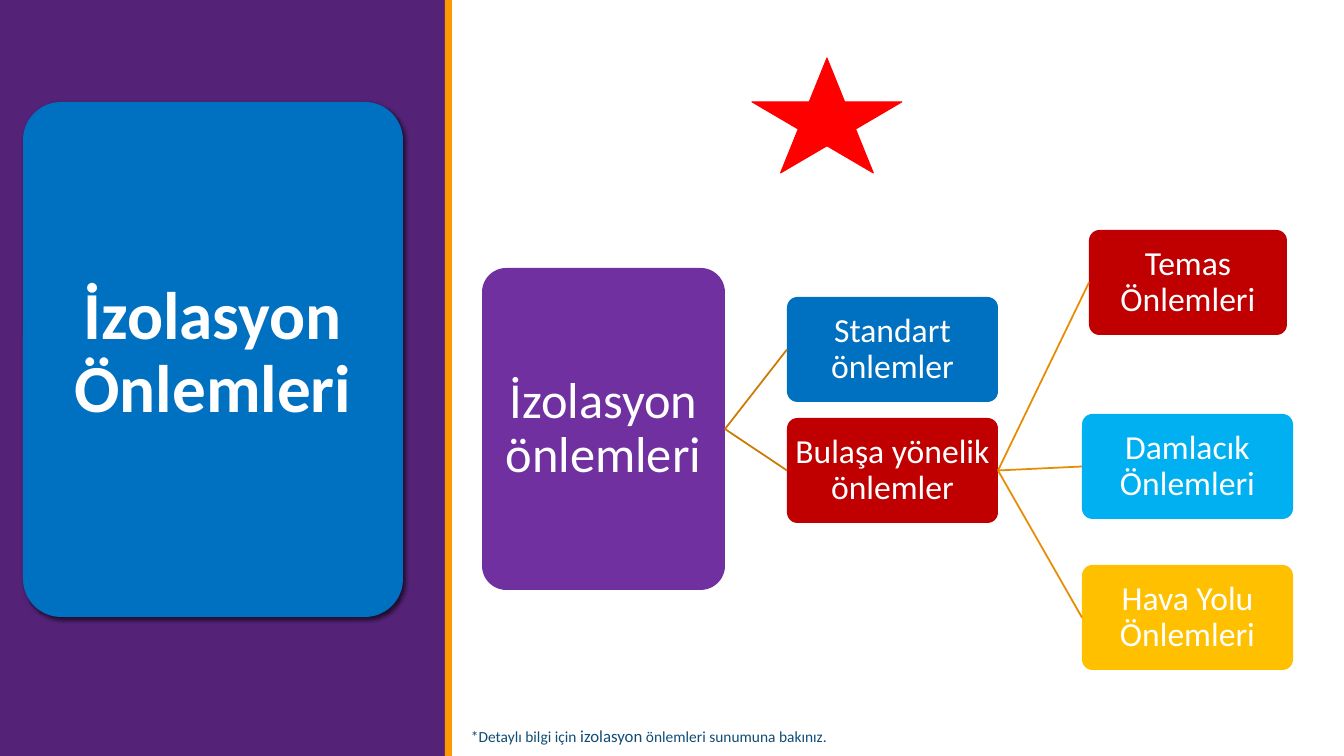
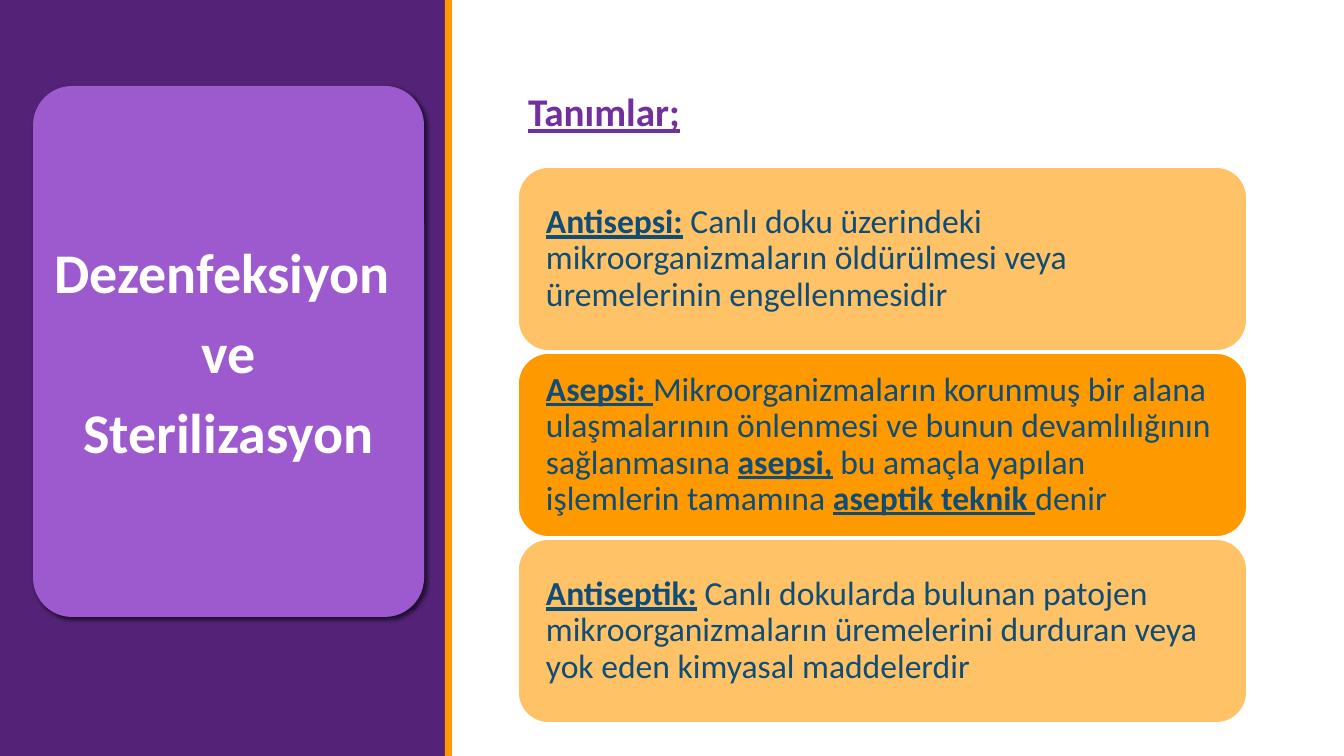
from lxml import etree
from pptx import Presentation
from pptx.dml.color import RGBColor
from pptx.enum.shapes import MSO_CONNECTOR, MSO_SHAPE
from pptx.enum.text import MSO_ANCHOR, PP_ALIGN
from pptx.oxml import parse_xml
from pptx.oxml.ns import nsdecls, qn
from pptx.util import Emu, Pt

RECT, ROUND, STAR = MSO_SHAPE.RECTANGLE, MSO_SHAPE.ROUNDED_RECTANGLE, MSO_SHAPE.STAR_5_POINT
STRAIGHT = MSO_CONNECTOR.STRAIGHT
LEFT, CENTER = PP_ALIGN.LEFT, PP_ALIGN.CENTER
TOP, MIDDLE = MSO_ANCHOR.TOP, MSO_ANCHOR.MIDDLE
LEFT_SITE, RIGHT_SITE = 1, 3

FONT = "Calibri"
PX_PER_INCH = 100.8
WIDTH, HEIGHT = 1344, 756
COLORS = {
    "white": "FFFFFF", "band": "542378", "orange": "FF9900", "peach": "FFC266",
    "blue": "0070C0", "lilac": "9D5ACF", "purple": "7030A0", "crimson": "C00000",
    "sky": "00B0F0", "gold": "FFC000", "red": "FF0000", "text": "0F4C76",
    "branch": "CC7B00", "twig": "E78B00",
}

BANDS = [((0, 0, 445, HEIGHT), "band"), ((445, 0, 7, HEIGHT), "orange")]

ISOLATION_TITLE = {"lines": ["İzolasyon Önlemleri"], "box": (23, 102, 380, 515),
                   "fill": "blue", "size": 48, "insets": (3, 0, 3, 11)}
STERILE_TITLE = {"lines": ["Dezenfeksiyon ", "ve", "Sterilizasyon"], "box": (33, 86, 391, 531),
                 "fill": "lilac", "size": 40, "insets": (8, 8, 8, 0)}

NODES = {
    "all": ("İzolasyon önlemleri", (482, 268, 243, 322), "purple", 36),
    "standard": ("Standart önlemler", (787, 297, 211, 105), "blue", 24),
    "spread": ("Bulaşa yönelik önlemler", (787, 418, 211, 105), "crimson", 24),
    "contact": ("Temas Önlemleri", (1089, 230, 198, 105), "crimson", 24),
    "droplet": ("Damlacık Önlemleri", (1082, 414, 211, 105), "sky", 24),
    "airborne": ("Hava Yolu Önlemleri", (1082, 565, 211, 105), "gold", 24),
}
LINKS = [("all", ["standard", "spread"], "branch"),
         ("spread", ["contact", "droplet", "airborne"], "twig")]
STAR_BOX = (752, 58, 150, 115)
FOOTNOTE = [("*Detaylı bilgi için ", 11), ("izolasyon", 12), (" önlemleri sunumuna bakınız.", 11)]

HEADING = "Tanımlar;"
DEFINITIONS = [
    [("Antisepsi:", True),
     (" Canlı doku üzerindeki mikroorganizmaların öldürülmesi veya üremelerinin engellenmesidir", False)],
    [("Asepsi: ", True),
     ("Mikroorganizmaların korunmuş bir alana ulaşmalarının önlenmesi ve bunun devamlılığının sağlanmasına ", False),
     ("asepsi,", True),
     (" bu amaçla yapılan işlemlerin tamamına ", False),
     ("aseptik teknik ", True),
     ("denir", False)],
    [("Antiseptik:", True),
     (" Canlı dokularda bulunan patojen mikroorganizmaların üremelerini durduran veya yok eden kimyasal maddelerdir", False)],
]
DEFINITION_FILLS = ["peach", "orange", "peach"]
DEFINITION_BOX = (518, 167, 729, 184)
DEFINITION_STEP = 186


def px(n):
    return Emu(round(n * 914400 / PX_PER_INCH))


def rgb(name):
    return RGBColor.from_string(COLORS[name])


def add_box(s, kind, box, fill, line=None, width=1.25):
    sp = s.shapes.add_shape(kind, *map(px, box))
    sp.shadow.inherit = False
    sp.fill.solid()
    sp.fill.fore_color.rgb = rgb(fill)
    if line:
        sp.line.color.rgb = rgb(line)
        sp.line.width = Pt(width)
    else:
        sp.line.fill.background()
    return sp


def setup_frame(sp, insets, anchor=MIDDLE, wrap=True):
    tf = sp.text_frame
    tf.word_wrap = wrap
    tf.vertical_anchor = anchor
    tf.margin_left, tf.margin_top, tf.margin_right, tf.margin_bottom = map(px, insets)
    return tf


def style(p, size, color, align=LEFT, bold=False, spacing=0.9):
    p.alignment = align
    p.line_spacing = spacing
    p.font.name = FONT
    p.font.size = Pt(size)
    p.font.bold = bold
    p.font.color.rgb = rgb(color)


def add_run(p, text):
    r = p.add_run()
    r.text = text
    return r


def add_shadow(sp):
    effects = sp._element.spPr.find(qn("a:effectLst"))
    effects.append(parse_xml(
        f'<a:outerShdw {nsdecls("a")} blurRad="38100" dist="25400" dir="2700000" algn="tl" rotWithShape="0">'
        '<a:srgbClr val="000000"><a:alpha val="60000"/></a:srgbClr></a:outerShdw>'))


def add_base(prs, title):
    s = prs.slides.add_slide(prs.slide_layouts[6])
    for box, fill in BANDS:
        add_box(s, RECT, box, fill)
    sp = add_box(s, ROUND, title["box"], title["fill"])
    sp.adjustments[0] = 0.1
    add_shadow(sp)
    tf = setup_frame(sp, title["insets"])
    for i, line in enumerate(title["lines"]):
        p = tf.add_paragraph() if i else tf.paragraphs[0]
        add_run(p, line)
        style(p, title["size"], "white", CENTER, True)
        if i < len(title["lines"]) - 1:
            p.space_after = Pt(14)
    return s


def add_link(s, parent, child, color):
    line = s.shapes.add_connector(STRAIGHT, 0, 0, 0, 0)
    line.begin_connect(parent, RIGHT_SITE)
    line.end_connect(child, LEFT_SITE)
    line.line.color.rgb = rgb(color)
    line.line.width = Pt(1.25)
    etree.SubElement(line._element.spPr, qn("a:effectLst"))


def add_isolation_slide(prs):
    s = add_base(prs, ISOLATION_TITLE)
    nodes = {}
    for key, (text, box, fill, size) in NODES.items():
        sp = nodes[key] = add_box(s, ROUND, box, fill)
        sp.adjustments[0] = 0.1
        p = setup_frame(sp, (2, 2, 2, 2)).paragraphs[0]
        add_run(p, text)
        style(p, size, "white", CENTER)
    for parent, children, color in LINKS:
        for child in children:
            add_link(s, nodes[parent], nodes[child], color)
    add_box(s, STAR, STAR_BOX, "red", "red", 0.75)
    sp = s.shapes.add_textbox(*map(px, (461, 721, 382, 30)))
    p = setup_frame(sp, (10, 5, 10, 5), TOP, False).paragraphs[0]
    for text, size in FOOTNOTE:
        add_run(p, text).font.size = Pt(size)
    style(p, 11, "text", spacing=1.0)


def add_sterile_slide(prs):
    s = add_base(prs, STERILE_TITLE)
    sp = s.shapes.add_textbox(*map(px, (528, 93, 700, 44)))
    p = setup_frame(sp, (0, 0, 0, 0), TOP).paragraphs[0]
    add_run(p, HEADING)
    style(p, 28, "purple", bold=True)
    p.font.underline = True
    x, y, w, h = DEFINITION_BOX
    for i, (parts, fill) in enumerate(zip(DEFINITIONS, DEFINITION_FILLS)):
        sp = add_box(s, ROUND, (x, y + i * DEFINITION_STEP, w, h), fill, "white")
        p = setup_frame(sp, (19, 10, 19, 10)).paragraphs[0]
        for text, strong in parts:
            r = add_run(p, text)
            r.font.bold = r.font.underline = strong
        style(p, 24, "text")


def main():
    prs = Presentation()
    prs.slide_width, prs.slide_height = px(WIDTH), px(HEIGHT)
    add_isolation_slide(prs)
    add_sterile_slide(prs)
    prs.save("out.pptx")


if __name__ == "__main__":
    main()
